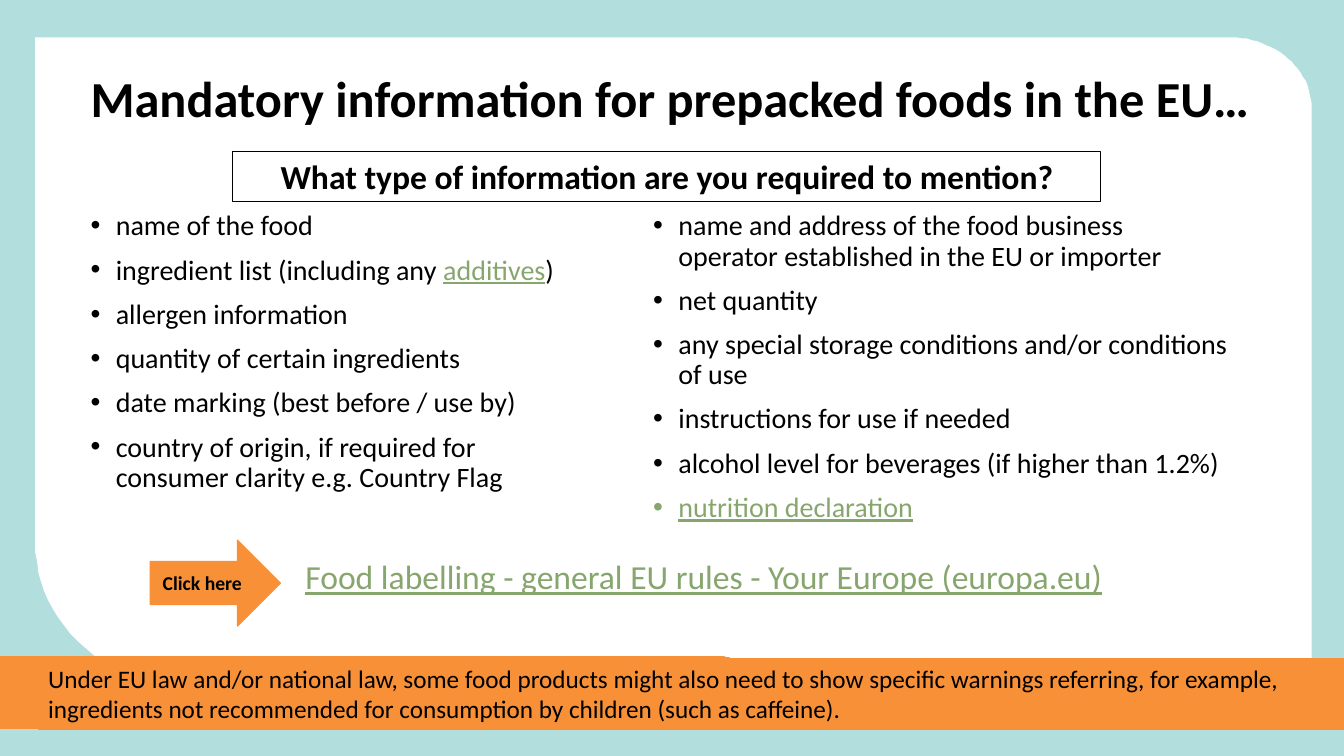
from dataclasses import dataclass

from lxml.etree import SubElement
from pptx import Presentation
from pptx.dml.color import RGBColor
from pptx.enum.shapes import MSO_SHAPE
from pptx.enum.text import MSO_ANCHOR, PP_ALIGN
from pptx.oxml.ns import qn
from pptx.shapes.autoshape import Shape
from pptx.slide import Slide
from pptx.util import Pt

PX = 9144
CURVE_STEPS = 24
FONT = "Calibri"
BLACK = RGBColor(0x00, 0x00, 0x00)
WHITE = RGBColor(0xFF, 0xFF, 0xFF)
AQUA = RGBColor(0xB2, 0xDE, 0xDD)
ORANGE = RGBColor(0xF7, 0x90, 0x37)
GREEN = RGBColor(0x87, 0xA6, 0x6E)

Point = tuple[float, float]


@dataclass(frozen=True)
class Span:
    text: str
    link: bool = False


@dataclass(frozen=True)
class TextBlock:
    left: int
    top: int
    width: int
    height: int
    paragraphs: tuple[tuple[Span, ...], ...]
    size: int
    bold: bool = False
    bullets: bool = False
    line_spacing: float = 1.0
    align: PP_ALIGN = PP_ALIGN.LEFT
    anchor: MSO_ANCHOR = MSO_ANCHOR.TOP
    preset: MSO_SHAPE | None = None
    fill: RGBColor | None = None
    line: RGBColor | None = None
    line_width: float = 0.75


def single(text: str, link: bool = False) -> tuple[Span, ...]:
    return (Span(text, link),)


LEFT_ITEMS = (
    single("name of the food"),
    (Span("ingredient list (including any "), Span("additives", True), Span(")")),
    single("allergen information"),
    single("quantity of certain ingredients"),
    single("date marking (best before / use by)"),
    single("country of origin, if required for consumer clarity e.g. Country Flag"),
)
RIGHT_ITEMS = (
    single("name and address of the food business operator established in the EU or importer"),
    single("net quantity"),
    single("any special storage conditions and/or conditions of use"),
    single("instructions for use if needed"),
    single("alcohol level for beverages (if higher than 1.2%)"),
    single("nutrition declaration", True),
)
TEXT_BLOCKS = (
    TextBlock(80, 205, 499, 344, LEFT_ITEMS, 20, bullets=True, line_spacing=0.9),
    TextBlock(80, 70, 1182, 64,
              (single("Mandatory information for prepacked foods in the EU…"),),
              36, bold=True, line_spacing=0.8, anchor=MSO_ANCHOR.MIDDLE),
    TextBlock(638, 205, 591, 323, RIGHT_ITEMS, 20, bullets=True, line_spacing=0.9),
    TextBlock(38, 653, 1295, 71,
              (single("Under EU law and/or national law, some food products might also need to "
                      "show specific warnings referring, for example, ingredients not recommended "
                      "for consumption by children (such as caffeine)."),),
              18, preset=MSO_SHAPE.RECTANGLE, fill=ORANGE, line=ORANGE),
    TextBlock(293, 547, 861, 50,
              (single("Food labelling - general EU rules - Your Europe (europa.eu)", True),), 24),
    TextBlock(149, 536, 129, 85, (single("Click here "),), 14, bold=True,
              align=PP_ALIGN.CENTER, anchor=MSO_ANCHOR.MIDDLE,
              preset=MSO_SHAPE.RIGHT_ARROW, fill=ORANGE, line=ORANGE, line_width=1),
    TextBlock(231, 150, 861, 50,
              (single("What type of information are you required to mention?"),),
              24, bold=True, align=PP_ALIGN.CENTER, preset=MSO_SHAPE.RECTANGLE, line=BLACK),
)


def curve(start: Point, first: Point, second: Point, end: Point) -> list[Point]:
    points = []
    for step in range(CURVE_STEPS + 1):
        t = step / CURVE_STEPS
        weights = ((1 - t) ** 3, 3 * t * (1 - t) ** 2, 3 * t ** 2 * (1 - t), t ** 3)
        controls = (start, first, second, end)
        points.append((sum(w * p[0] for w, p in zip(weights, controls)),
                       sum(w * p[1] for w, p in zip(weights, controls))))
    return points


PANEL = [
    (35, 37),
    *curve((1220, 37), (1265, 37), (1301, 69), (1301, 108)),
    (1301, 687),
    *curve((205, 687), (111, 687), (35, 620), (35, 538)),
]
FOOTER_TAB = [
    (0, 723),
    (0, 651),
    *curve((713, 651), (734, 651), (751, 669), (751, 690)),
    (751, 723),
]


def paint(shape: Shape, fill: RGBColor | None, line: RGBColor | None = None,
          line_width: float = 0.75) -> None:
    shape.shadow.inherit = False
    if fill is None:
        shape.fill.background()
    else:
        shape.fill.solid()
        shape.fill.fore_color.rgb = fill
    if line is None:
        shape.line.fill.background()
    else:
        shape.line.color.rgb = line
        shape.line.width = Pt(line_width)


def draw_outline(slide: Slide, points: list[Point], fill: RGBColor) -> None:
    builder = slide.shapes.build_freeform(*points[0], scale=PX)
    builder.add_line_segments(points[1:], close=True)
    paint(builder.convert_to_shape(), fill)


def draw_text_block(slide: Slide, block: TextBlock) -> None:
    bounds = [value * PX for value in (block.left, block.top, block.width, block.height)]
    if block.preset is None:
        shape = slide.shapes.add_textbox(*bounds)
    else:
        shape = slide.shapes.add_shape(block.preset, *bounds)
        paint(shape, block.fill, block.line, block.line_width)
    frame = shape.text_frame
    frame.word_wrap = True
    frame.vertical_anchor = block.anchor
    for index, spans in enumerate(block.paragraphs):
        paragraph = frame.paragraphs[0] if index == 0 else frame.add_paragraph()
        paragraph.alignment = block.align
        paragraph.line_spacing = block.line_spacing
        if block.bullets:
            paragraph.space_before = Pt(10)
            properties = paragraph._p.get_or_add_pPr()
            properties.set("marL", str(25 * PX))
            properties.set("indent", str(-25 * PX))
            SubElement(properties, qn("a:buFont"), typeface="Arial")
            SubElement(properties, qn("a:buChar"), char="•")
        for span in spans:
            run = paragraph.add_run()
            run.text = span.text
            run.font.name = FONT
            run.font.size = Pt(block.size)
            run.font.bold = block.bold
            run.font.underline = span.link
            run.font.color.rgb = GREEN if span.link else BLACK


def main() -> None:
    presentation = Presentation()
    presentation.slide_width = 1333 * PX
    presentation.slide_height = 750 * PX
    slide = presentation.slides.add_slide(presentation.slide_layouts[6])
    backdrop = slide.shapes.add_shape(MSO_SHAPE.RECTANGLE, 0, 0, 1333 * PX, 750 * PX)
    paint(backdrop, AQUA)
    draw_outline(slide, PANEL, WHITE)
    draw_outline(slide, FOOTER_TAB, ORANGE)
    for block in TEXT_BLOCKS:
        draw_text_block(slide, block)
    presentation.save("out.pptx")


if __name__ == "__main__":
    main()
